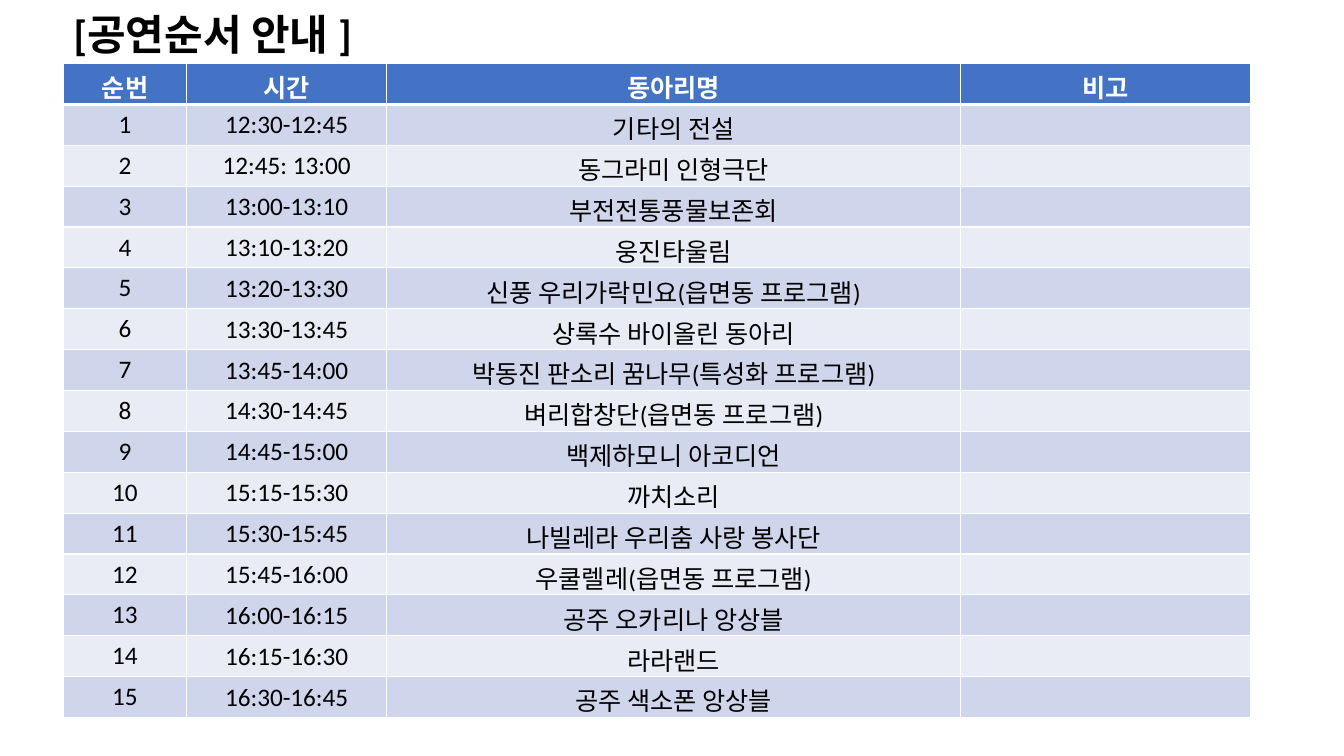
import pptx
import pptx.dml.color
import pptx.enum.text
import pptx.oxml
import pptx.oxml.ns
import pptx.util
from pptx.dml.color import RGBColor
from pptx.enum.text import MSO_ANCHOR, PP_ALIGN
from pptx.util import Cm

BLACK = RGBColor(0x00, 0x00, 0x00)
WHITE = RGBColor(0xFF, 0xFF, 0xFF)
HEADER_BLUE = RGBColor(0x44, 0x72, 0xC4)
BAND_DARK = RGBColor(0xCF, 0xD5, 0xEA)
BAND_LIGHT = RGBColor(0xE9, 0xEB, 0xF5)

HEADINGS = ("순번", "시간", "동아리명", "비고")
COLUMN_WIDTHS = (3.1, 5.05, 14.45, 7.32)
ROW_HEIGHT = 1.03
TIME_COLUMN = 1
PERFORMANCES = (
    ("12:30-12:45", "기타의 전설"),
    ("12:45: 13:00", "동그라미 인형극단"),
    ("13:00-13:10", "부전전통풍물보존회"),
    ("13:10-13:20", "웅진타울림"),
    ("13:20-13:30", "신풍 우리가락민요(읍면동 프로그램)"),
    ("13:30-13:45", "상록수 바이올린 동아리"),
    ("13:45-14:00", "박동진 판소리 꿈나무(특성화 프로그램)"),
    ("14:30-14:45", "벼리합창단(읍면동 프로그램)"),
    ("14:45-15:00", "백제하모니 아코디언"),
    ("15:15-15:30", "까치소리"),
    ("15:30-15:45", "나빌레라 우리춤 사랑 봉사단"),
    ("15:45-16:00", "우쿨렐레(읍면동 프로그램)"),
    ("16:00-16:15", "공주 오카리나 앙상블"),
    ("16:15-16:30", "라라랜드"),
    ("16:30-16:45", "공주 색소폰 앙상블"),
)


def write_text(frame, text, *, font, size=18, color=BLACK, bold=False,
               align=PP_ALIGN.CENTER):
    para = frame.paragraphs[0]
    para.alignment = align
    para.font.size = pptx.util.Pt(size)
    if text:
        span = para.add_run()
        span.text = text
        span.font.name = font
        span.font.size = pptx.util.Pt(size)
        span.font.bold = bold
        span.font.color.rgb = color


def set_borders(cell, **widths):
    """Draw white cell borders; widths in points are keyed by side L, R, T, B."""
    properties = cell._tc.get_or_add_tcPr()
    namespace = pptx.oxml.ns.nsdecls("a")
    for side in "LRTB":
        width = pptx.util.Pt(widths.get(side, 1))
        properties.append(pptx.oxml.parse_xml(
            f'<a:ln{side} {namespace} w="{width}"><a:solidFill>'
            f'<a:srgbClr val="{WHITE}"/></a:solidFill></a:ln{side}>'))


class ProgrammePage:
    """Holds the font and the page that elements are added to."""

    def __init__(self, page, font="Calibri"):
        self.page = page
        self.font = font

    def add_title(self, text, left, top, width, height):
        box = self.page.shapes.title
        box.left, box.top, box.width, box.height = map(
            Cm, (left, top, width, height))
        frame = box.text_frame
        frame.vertical_anchor = MSO_ANCHOR.TOP
        frame.auto_size = pptx.enum.text.MSO_AUTO_SIZE.SHAPE_TO_FIT_TEXT
        write_text(frame, text, font=self.font, size=30, bold=True,
                   align=PP_ALIGN.LEFT)

    def add_schedule(self, rows, left, top):
        table = self.page.shapes.add_table(
            len(rows), len(COLUMN_WIDTHS), Cm(left), Cm(top),
            Cm(sum(COLUMN_WIDTHS)), Cm(ROW_HEIGHT * len(rows))).table
        for column, width in zip(table.columns, COLUMN_WIDTHS):
            column.width = Cm(width)
        for row_index, values in enumerate(rows):
            table.rows[row_index].height = Cm(ROW_HEIGHT)
            for column_index, text in enumerate(values):
                self.fill_cell(table.cell(row_index, column_index), text,
                               row_index, column_index)

    def fill_cell(self, cell, text, row_index, column_index):
        is_header = row_index == 0
        set_borders(cell, T=3 if row_index == 1 else 1,
                    B=3 if is_header else 1)
        cell.fill.solid()
        if is_header:
            cell.fill.fore_color.rgb = HEADER_BLUE
        else:
            cell.fill.fore_color.rgb = BAND_DARK if row_index % 2 else BAND_LIGHT
            if column_index == TIME_COLUMN:
                cell.vertical_anchor = MSO_ANCHOR.MIDDLE
                cell.margin_left = cell.margin_right = cell.margin_top = Cm(0.02)
                cell.margin_bottom = 0
        write_text(cell.text_frame, text, font=self.font, bold=is_header,
                   color=WHITE if is_header else BLACK)


def main():
    deck = pptx.Presentation()
    deck.slide_width, deck.slide_height = Cm(33.87), Cm(19.05)
    title_only = deck.slide_layouts[5]
    programme = ProgrammePage(deck.slides.add_slide(title_only))
    programme.add_title("[공연순서 안내 ]", 1.6, 0.08, 8.76, 1.55)
    rows = [HEADINGS] + [
        (str(number), time, club, "")
        for number, (time, club) in enumerate(PERFORMANCES, start=1)]
    programme.add_schedule(rows, 1.6, 1.6)
    deck.save("out.pptx")


if __name__ == "__main__":
    main()
